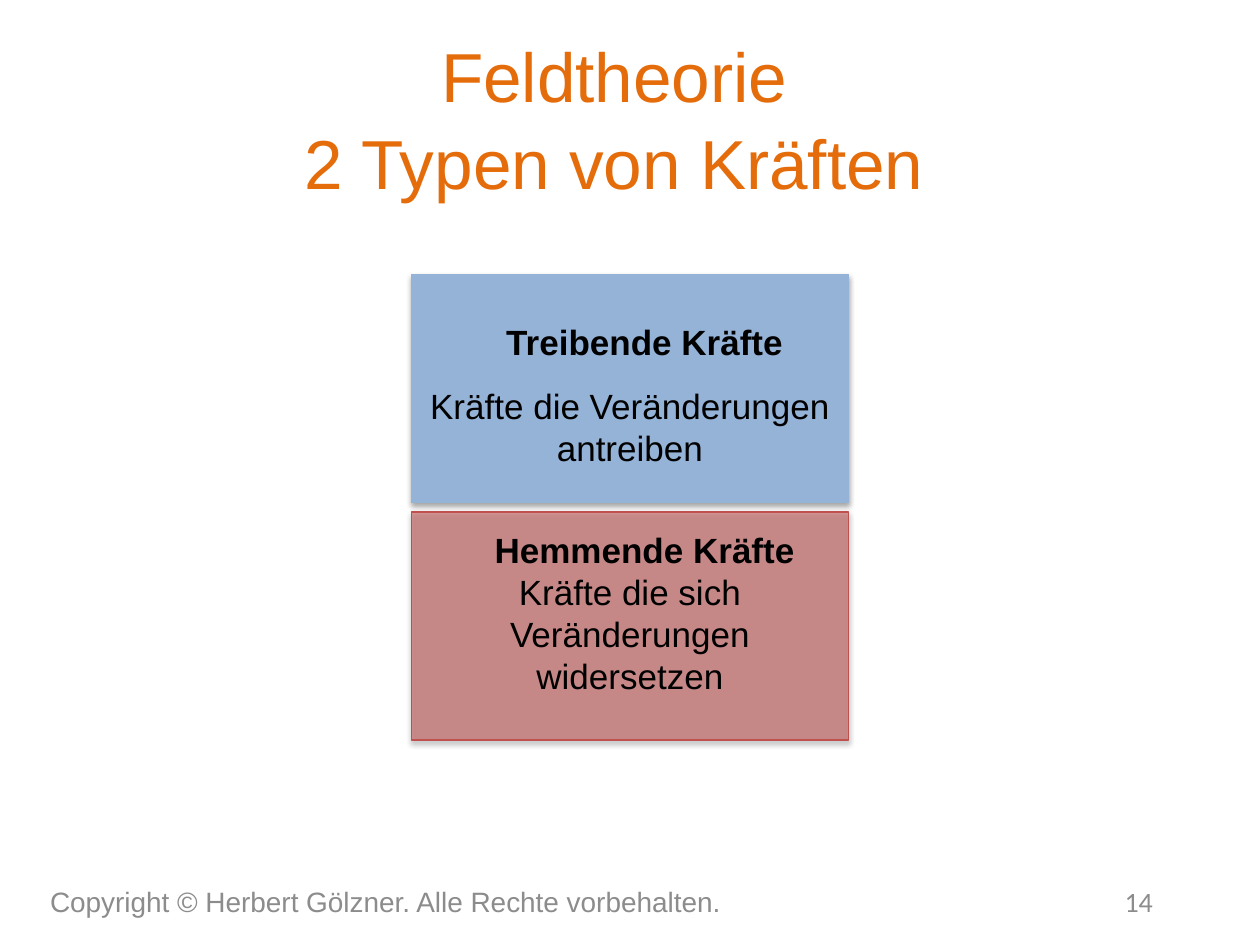
from dataclasses import dataclass

from lxml.etree import SubElement
from pptx import Presentation
from pptx.dml.color import RGBColor
from pptx.enum.shapes import MSO_SHAPE as Shape
from pptx.enum.text import MSO_ANCHOR as Anchor, PP_ALIGN as Align
from pptx.oxml.ns import qn
from pptx.util import Cm, Pt


@dataclass(frozen=True)
class Theme:
    """Colours, fonts and type sizes of the slide."""
    orange: str = "E46C0A"
    grey: str = "8C8C8C"
    black: str = "000000"
    blue: str = "95B3D7"
    red: str = "C0504D"
    font: str = "Arial"
    number_font: str = "Calibri"
    title: float = 39.6
    body: float = 20
    footer: float = 16


THEME = Theme()


def add_text(page, box, lines, anchor=Anchor.TOP):
    """Place a text box; each line is its text, font values and paragraph values."""
    shape = page.shapes.add_textbox(*map(Cm, box))
    frame = shape.text_frame
    frame.word_wrap = True
    frame.vertical_anchor = anchor
    for index, (text, font, layout) in enumerate(lines):
        para = frame.paragraphs[0] if index == 0 else frame.add_paragraph()
        para.text = text
        layout = dict(layout)
        indent = layout.pop("indent", None)
        if indent:
            para._p.get_or_add_pPr().set("marL", str(Cm(indent)))
        for name, value in layout.items():
            setattr(para, name, value)
        font = dict(font)
        colour = font.pop("colour")
        for span in para.runs:
            span.font.color.rgb = RGBColor.from_string(colour)
            for name, value in font.items():
                setattr(span.font, name, value)


def add_shadow(shape):
    """Give a shape a soft shadow straight below it."""
    shape.shadow.inherit = False
    effects = shape._element.spPr.find(qn("a:effectLst"))
    shadow = SubElement(effects, qn("a:outerShdw"), blurRad=str(Pt(3.1)),
                        dist=str(Pt(1.8)), dir="5400000", rotWithShape="0")
    colour = SubElement(shadow, qn("a:srgbClr"), val=THEME.black)
    SubElement(colour, qn("a:alpha"), val="35000")


def add_title(page, box):
    """Place the two-line title."""
    font = {"size": Pt(THEME.title), "name": THEME.font, "colour": THEME.orange}
    layout = {"alignment": Align.CENTER, "line_spacing": 1.05}
    add_text(page, box, [("Feldtheorie\v2 Typen von Kräften", font, layout)],
             Anchor.MIDDLE)


def add_force(page, box, heading, body, colour, text_top, gap=0, opacity=100):
    """Place one type of force: a panel with a heading and an explanation."""
    left, top, width, height = box
    panel = page.shapes.add_shape(Shape.RECTANGLE, *map(Cm, box))
    panel.fill.solid()
    panel.fill.fore_color.rgb = RGBColor.from_string(colour)
    if opacity < 100:
        fill = panel._element.spPr.find(qn("a:solidFill"))
        SubElement(fill[0], qn("a:alpha"), val=str(opacity * 1000))
    panel.line.color.rgb = RGBColor.from_string(colour)
    panel.line.width = Pt(0.75)
    add_shadow(panel)

    font = {"size": Pt(THEME.body), "name": THEME.font, "colour": THEME.black}
    centred = {"alignment": Align.CENTER}
    add_text(page, (left, top + text_top, width, height - 2 * text_top), [
        (heading, font | {"bold": True}, centred | {"indent": 0.59}),
        (body, font, centred | {"space_before": Pt(gap)}),
    ])


def add_footer(page, box):
    """Place the copyright line on the left and the page number on the right."""
    left, top, width, height = box
    number_width = 5.92
    font = {"size": Pt(THEME.footer), "name": THEME.font, "colour": THEME.grey}
    add_text(page, (left, top, 16.15, height),
             [("Copyright © Herbert Gölzner. Alle Rechte vorbehalten.", font, {})],
             Anchor.MIDDLE)
    add_text(page, (left + width - number_width, top, number_width, height),
             [("14", font | {"name": THEME.number_font}, {"alignment": Align.RIGHT})],
             Anchor.MIDDLE)


def main():
    """Build the slide and save it."""
    deck = Presentation()
    deck.slide_width, deck.slide_height = Cm(25.4), Cm(19.05)
    page = deck.slides.add_slide(deck.slide_layouts[6])

    add_title(page, (1.27, 0.76, 22.23, 3.18))
    left, top, width, height, pitch = 8.3, 5.53, 8.8, 4.6, 4.79
    add_force(page, (left, top, width, height), "Treibende Kräfte",
              "Kräfte die Veränderungen antreiben", THEME.blue, 0.8, gap=12.5)
    add_force(page, (left, top + pitch, width, height), "Hemmende Kräfte",
              "Kräfte die sich Veränderungen widersetzen", THEME.red, 0.2, opacity=55)
    add_footer(page, (0.76, 17.65, 22.73, 1.02))
    deck.save("out.pptx")


if __name__ == "__main__":
    main()
